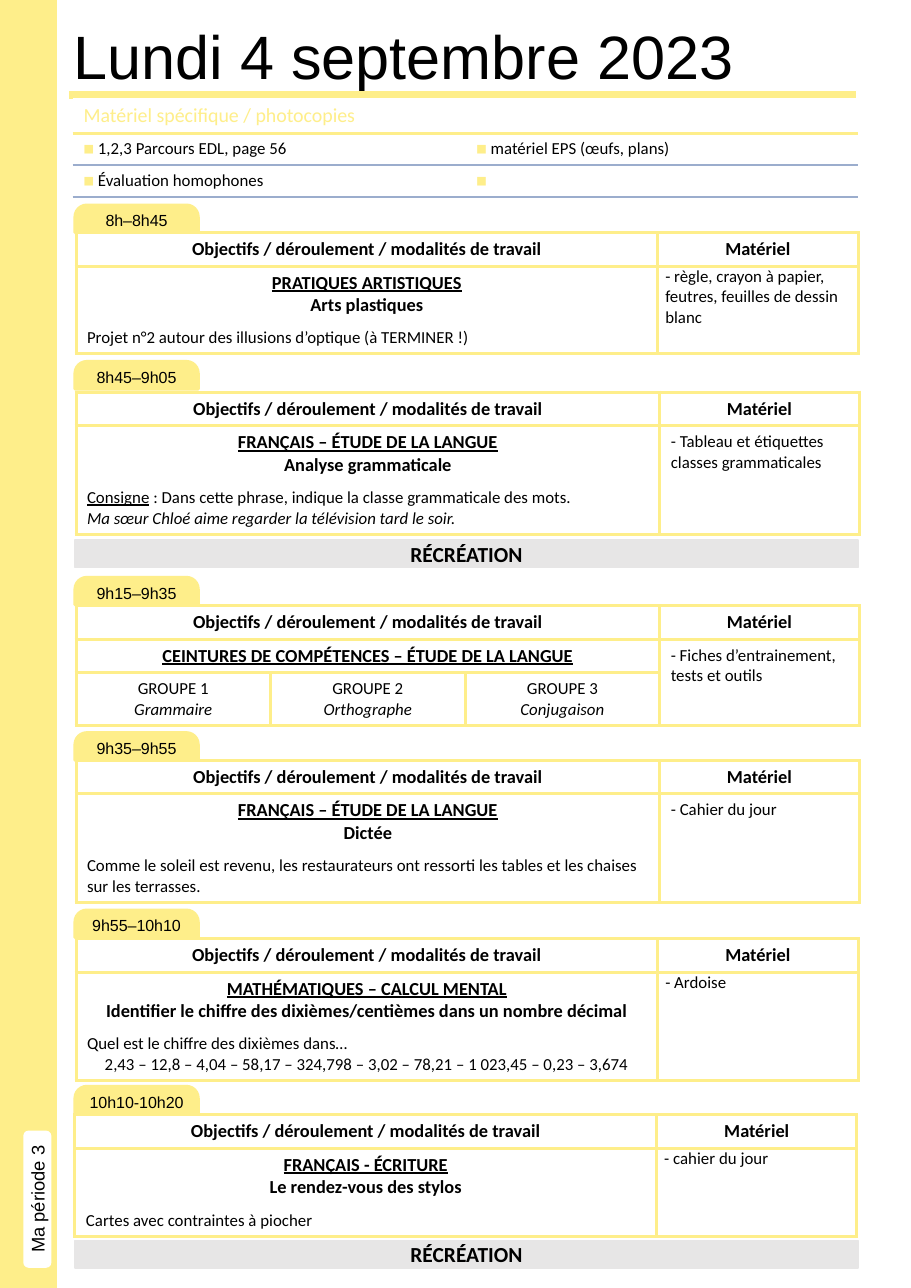
from lxml.etree import SubElement
from pptx import Presentation
from pptx.dml.color import RGBColor
from pptx.enum.shapes import MSO_CONNECTOR, MSO_SHAPE
from pptx.enum.text import MSO_ANCHOR, MSO_AUTO_SIZE, PP_ALIGN
from pptx.oxml.ns import qn
from pptx.util import Pt

YELLOW, BLUE, GREY, WHITE, BLACK = "FEEE8A", "9BADCD", "E7E6E6", "FFFFFF", "000000"
CENTER = PP_ALIGN.CENTER
GAP = 7.3  # space between a session's heading and its details

TITLE = dict(name="Arial", size=Pt(40))
PERIOD = dict(name="Arial", size=Pt(12), align=CENTER)
TIME = dict(name="Arial", size=Pt(10.5), align=CENTER)
BREAK = dict(name="Calibri", size=Pt(14), bold=True, align=CENTER)
SUPPLIES = dict(name="Calibri", size=Pt(13), color=YELLOW)
BODY = dict(name="Calibri", size=Pt(11))
BULLET = dict(BODY, color=YELLOW)
FIRST = dict(BODY, gap=GAP)
UNDERLINED = dict(FIRST, underline=True)
ITALIC = dict(BODY, italic=True)
CENTERED = dict(BODY, align=CENTER)
CENTERED_ITALIC = dict(ITALIC, align=CENTER)
HEADING = dict(name="Calibri", size=Pt(12), bold=True, align=CENTER)
SUBJECT = dict(HEADING, underline=True)


def write(text_frame, paragraphs):
    """Each paragraph is a list of (text, format) runs; the first format sets alignment and gap."""
    for index, runs in enumerate(paragraphs):
        paragraph = text_frame.paragraphs[0] if index == 0 else text_frame.add_paragraph()
        paragraph.alignment = runs[0][1].get("align", PP_ALIGN.LEFT)
        paragraph.space_before = Pt(runs[0][1].get("gap", 0))
        for text, values in runs:
            run = paragraph.add_run()
            run.text = text
            for name, value in values.items():
                if name not in ("align", "gap", "color"):
                    setattr(run.font, name, value)
            run.font.color.rgb = RGBColor.from_string(values.get("color", BLACK))


def style_cell(cell, borders):
    """Borders are (colour, width) or None, in the order left, right, top, bottom."""
    properties = cell._tc.get_or_add_tcPr()
    for side, border in zip(("a:lnL", "a:lnR", "a:lnT", "a:lnB"), borders):
        line = SubElement(properties, qn(side))
        if border:
            color, width = border
            line.set("w", str(Pt(width)))
            SubElement(SubElement(line, qn("a:solidFill")), qn("a:srgbClr")).set("val", color)
        else:
            SubElement(line, qn("a:noFill"))
    cell.fill.solid()
    cell.fill.fore_color.rgb = RGBColor.from_string(WHITE)
    # An empty cell must not raise its row
    cell.text_frame.paragraphs[0]._p.get_or_add_endParaRPr().set("sz", "1100")


presentation = Presentation()
presentation.slide_width, presentation.slide_height = Pt(595.5), Pt(841.7)
slide = presentation.slides.add_slide(presentation.slide_layouts[5])
shapes = slide.shapes

title = shapes.title
title.left, title.top, title.width, title.height = Pt(41), Pt(8.6), Pt(527), Pt(55.4)
title.text_frame.auto_size = MSO_AUTO_SIZE.NONE
title.text_frame.vertical_anchor = MSO_ANCHOR.TOP
write(title.text_frame, [[("Lundi 4 septembre 2023", TITLE)]])

# Time, tab top, table top, left, column widths, body height, tight material cell,
# objectives, groups, material
WIDE, NARROW = (380.2, 131), (381.6, 130.3)
sessions = [
    ("8h–8h45", 134, 152, 49.7, WIDE, 56.2, True,
     [[("PRATIQUES ARTISTIQUES", SUBJECT)], [("Arts plastiques", HEADING)],
      [("Projet n°2 autour des illusions d’optique (à TERMINER !)", FIRST)]],
     [], "- règle, crayon à papier, feutres, feuilles de dessin blanc"),
    ("8h45–9h05", 236.2, 256.3, 49.7, NARROW, 69.5, False,
     [[("FRANÇAIS – ÉTUDE DE LA LANGUE", SUBJECT)], [("Analyse grammaticale", HEADING)],
      [("Consigne", UNDERLINED),
       (" : Dans cette phrase, indique la classe grammaticale des mots.", BODY)],
      [("Ma sœur Chloé aime regarder la télévision tard le soir.", ITALIC)]],
     [], "- Tableau et étiquettes classes grammaticales"),
    ("9h15–9h35", 377.3, 396, 49.7, NARROW, 21.6, False,
     [[("CEINTURES DE COMPÉTENCES – ÉTUDE DE LA LANGUE", SUBJECT)]],
     ["Grammaire", "Orthographe", "Conjugaison"], "- Fiches d’entrainement, tests et outils"),
    ("9h35–9h55", 478.8, 497, 49.7, NARROW, 69.5, False,
     [[("FRANÇAIS – ÉTUDE DE LA LANGUE", SUBJECT)], [("Dictée", HEADING)],
      [("Comme le soleil est revenu, les restaurateurs ont ressorti les tables "
        "et les chaises sur les terrasses.", FIRST)]],
     [], "- Cahier du jour"),
    ("9h55–10h10", 594.7, 613.4, 49.7, WIDE, 69.5, True,
     [[("MATHÉMATIQUES – CALCUL MENTAL", SUBJECT)],
      [("Identifier le chiffre des dixièmes/centièmes dans un nombre décimal", HEADING)],
      [("Quel est le chiffre des dixièmes dans…", FIRST)],
      [("2,43 – 12,8 – 4,04 – 58,17 – 324,798 – 3,02 – 78,21 – 1 023,45 – 0,23 – 3,674",
        CENTERED)]],
     [], "- Ardoise"),
    ("10h10-10h20", 709.9, 728.6, 49, WIDE, 56.2, True,
     [[("FRANÇAIS - ÉCRITURE", SUBJECT)], [("Le rendez-vous des stylos", HEADING)],
      [("Cartes avec contraintes à piocher", FIRST)]],
     [], "- cahier du jour"),
]

# Side band, period label, breaks and time tabs
blocks = [
    (MSO_SHAPE.RECTANGLE, (0, 0, 36.7, 841.7), YELLOW, 1, "", PERIOD),
    (MSO_SHAPE.ROUNDED_RECTANGLE, (15.8, 739.4, 17.3, 88.6), WHITE, 1, "Ma période 3", PERIOD),
]
blocks += [(MSO_SHAPE.RECTANGLE, (49, top, 512, 18), GREY, 1, "RÉCRÉATION", BREAK)
           for top in (352.8, 810.7)]
blocks += [(MSO_SHAPE.ROUND_2_SAME_RECTANGLE, (49, session[1], 80.6, 18), YELLOW, 2,
            session[0], TIME) for session in sessions]
for kind, box, color, line_width, text, text_format in blocks:
    shape = shapes.add_shape(kind, *map(Pt, box))
    shape.shadow.inherit = False
    shape.fill.solid()
    shape.fill.fore_color.rgb = RGBColor.from_string(color)
    shape.line.color.rgb = RGBColor.from_string(color)
    shape.line.width = Pt(line_width)
    if kind == MSO_SHAPE.ROUND_2_SAME_RECTANGLE:
        shape.adjustments[0] = 0.43
    if text:
        frame = shape.text_frame
        frame.vertical_anchor = MSO_ANCHOR.MIDDLE
        for side in ("left", "right", "top", "bottom"):
            setattr(frame, f"margin_{side}", 0)
        write(frame, [[(text, text_format)]])
    if text_format is PERIOD and text:
        frame._txBody.bodyPr.set("vert", "vert270")

title_rule = shapes.add_connector(MSO_CONNECTOR.STRAIGHT, Pt(45.4), Pt(62), Pt(559.4), Pt(62))
title_rule.line.color.rgb = RGBColor.from_string(YELLOW)
title_rule.line.width = Pt(4.75)
SubElement(title_rule._element.spPr, qn("a:effectLst"))

# Session tables
for _, _, top, left, (objective_width, material_width), body_height, tight, \
        objectives, groups, material in sessions:
    split = len(groups) or 1
    widths = [objective_width / split] * split + [material_width]
    heights = [21.6, body_height] + ([34] if groups else [])
    table = shapes.add_table(len(heights), len(widths), Pt(left), Pt(top),
                             Pt(sum(widths)), Pt(sum(heights))).table
    table.first_row = table.horz_banding = False
    for column, width in zip(table.columns, widths):
        column.width = Pt(width)
    for row, height in zip(table.rows, heights):
        row.height = Pt(height)
    for cell in table.iter_cells():
        style_cell(cell, [(YELLOW, 2.25)] * 4)
        cell.vertical_anchor = MSO_ANCHOR.MIDDLE
    if groups:
        for row in (0, 1):
            table.cell(row, 0).merge(table.cell(row, split - 1))
        table.cell(1, split).merge(table.cell(2, split))
    for number, group in enumerate(groups, 1):
        write(table.cell(2, number - 1).text_frame,
              [[(f"GROUPE {number}", CENTERED)], [(group, CENTERED_ITALIC)]])
    write(table.cell(0, 0).text_frame,
          [[("Objectifs / déroulement / modalités de travail", HEADING)]])
    write(table.cell(0, split).text_frame, [[("Matériel", HEADING)]])
    write(table.cell(1, 0).text_frame, objectives)
    material_cell = table.cell(1, split)
    material_cell.vertical_anchor = MSO_ANCHOR.TOP
    if tight:
        material_cell.margin_left = material_cell.margin_right = Pt(5)
        material_cell.margin_top = material_cell.margin_bottom = 0
    write(material_cell.text_frame, [[(material, BODY)]])

# Supplies table
supplies = [
    [[("Matériel spécifique / photocopies", SUPPLIES)], None],
    [[("◼︎ ", BULLET), ("1,2,3 Parcours EDL, page 56", BODY)],
     [("◼︎ ", BULLET), ("matériel EPS (œufs, plans)", BODY)]],
    [[("◼︎ ", BULLET), ("Évaluation homophones", BODY)], [("◼︎", BULLET)]],
]
rules = [None, (YELLOW, 2.25), (BLUE, 1), (BLUE, 1)]
table = shapes.add_table(3, 2, Pt(47.5), Pt(64), Pt(513.4), Pt(63.4)).table
table.first_row = table.horz_banding = False
for column in table.columns:
    column.width = Pt(256.7)
for row_index, (contents, height) in enumerate(zip(supplies, (22.8, 20.3, 20.3))):
    table.rows[row_index].height = Pt(height)
    for column_index, runs in enumerate(contents):
        cell = table.cell(row_index, column_index)
        style_cell(cell, [None, None, rules[row_index], rules[row_index + 1]])
        if runs:
            write(cell.text_frame, [runs])

presentation.save("out.pptx")
